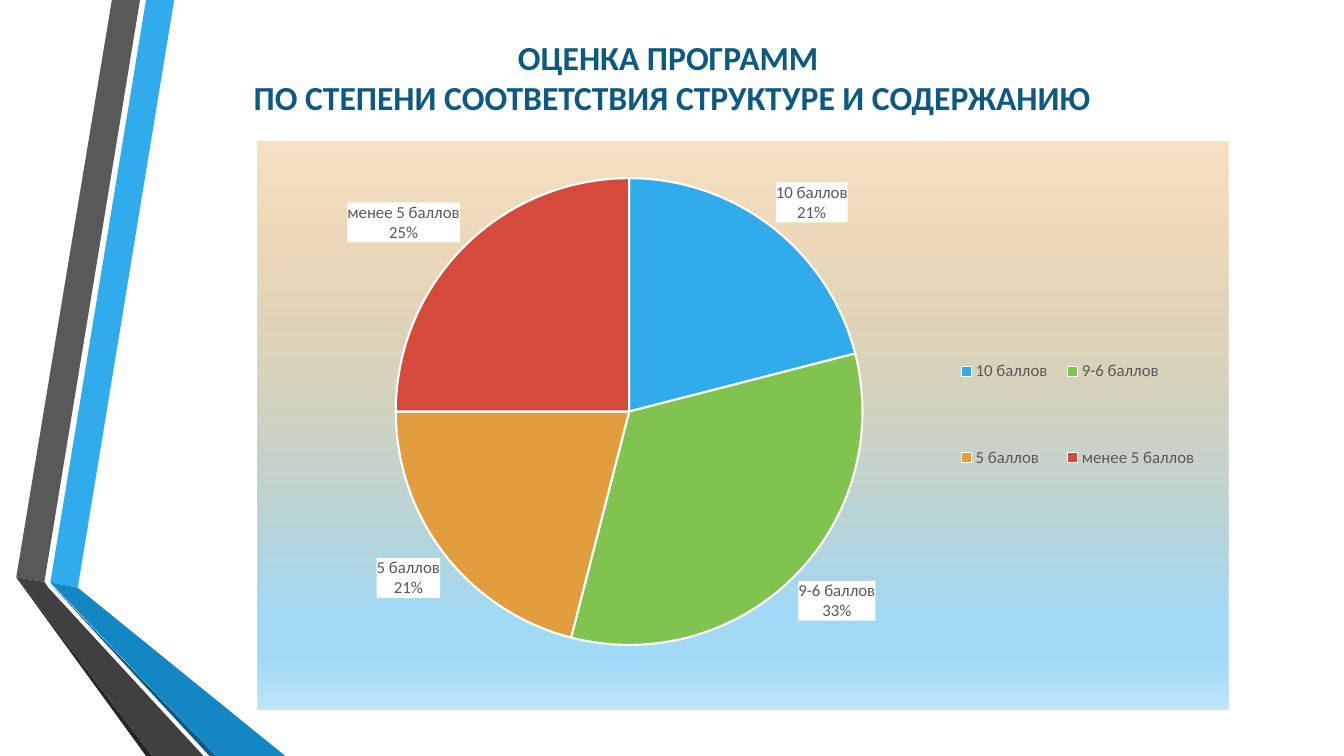
from dataclasses import dataclass

from lxml import etree
from pptx import Presentation
from pptx.chart.data import CategoryChartData
from pptx.dml.color import RGBColor
from pptx.enum.chart import XL_CHART_TYPE, XL_LABEL_POSITION as LABEL_POS, XL_LEGEND_POSITION as LEGEND_POS
from pptx.enum.text import PP_ALIGN
from pptx.oxml import parse_xml
from pptx.oxml.ns import nsdecls, qn
from pptx.util import Cm, Pt


@dataclass(frozen=True)
class Theme:
    font: str = "Calibri"
    title_size: int = 24
    chart_size: int = 12
    title: str = "0C5A82"
    text: str = "595959"
    white: str = "FFFFFF"
    slices: tuple = ("30ACEC", "80C34F", "E29D3E", "D64A3B")
    # position %, colour, opacity %
    backdrop: tuple = ((0, "E29D3E", 30), (83, "A2DAF6", 100),
                       (91, "A2DAF6", 100), (100, "C1E6F9", 100))


THEME = Theme()
SLIDE_W, SLIDE_H = 33.87, 19.05

# Colour and outline in cm, from back to front
RIBBONS = (
    ("30ACEC", ((1.27, 14.68), (1.96, 14.81), (4.39, 0), (3.68, 0))),
    ("595959", ((3.53, 0), (2.82, 0), (0.41, 14.55), (1.12, 14.66))),
    ("262626", ((0.41, 14.55), (3.68, 19.05), (3.84, 19.05))),
    ("0C5A82", ((1.27, 14.71), (5.28, 19.05), (5.44, 19.05))),
    ("1287C3", ((1.27, 14.68), (5.44, 19.05), (7.19, 19.05), (1.96, 14.81))),
    ("404040", ((5.13, 19.05), (1.22, 14.81), (1.12, 14.66), (0.41, 14.55), (3.84, 19.05))),
)
TITLE_LINES = ("ОЦЕНКА ПРОГРАММ ", "ПО СТЕПЕНИ СООТВЕТСТВИЯ СТРУКТУРЕ И СОДЕРЖАНИЮ")
SCORES = {"10 баллов": 21, "9-6 баллов": 33, "5 баллов": 21, "менее 5 баллов": 25}


def rgb(color):
    return RGBColor.from_string(color)


def style_font(font, size, color, bold=False):
    font.name, font.size, font.bold = THEME.font, Pt(size), bold
    font.color.rgb = rgb(color)


def add_ribbons(slide, left, top):
    for color, outline in RIBBONS:
        points = [(Cm(left + x), Cm(top + y)) for x, y in outline]
        builder = slide.shapes.build_freeform(*points[0])
        builder.add_line_segments(points[1:], close=True)
        sp = builder.convert_to_shape()
        sp.shadow.inherit = False
        sp.fill.solid()
        sp.fill.fore_color.rgb = rgb(color)
        sp.line.fill.background()


def add_title(slide, left, top, width, height):
    tf = slide.shapes.add_textbox(Cm(left), Cm(top), Cm(width), Cm(height)).text_frame
    tf.word_wrap = True
    tf.text = "\n".join(TITLE_LINES)
    for p in tf.paragraphs:
        p.alignment = PP_ALIGN.CENTER
        style_font(p.font, THEME.title_size, THEME.title, bold=True)


def layout_xml(x, y, w, h, inner=False):
    """Manual chart layout, in fractions of the chart area."""
    target = '<c:layoutTarget val="inner"/>' if inner else ""
    return parse_xml(
        f'<c:layout {nsdecls("c")}><c:manualLayout>{target}'
        '<c:xMode val="edge"/><c:yMode val="edge"/>'
        f'<c:x val="{x}"/><c:y val="{y}"/><c:w val="{w}"/><c:h val="{h}"/>'
        '</c:manualLayout></c:layout>')


def shape_props(fill):
    return parse_xml(f'<c:spPr {nsdecls("c", "a")}>{fill}<a:ln><a:noFill/></a:ln></c:spPr>')


def fill_backdrop(chart):
    stops = "".join(
        f'<a:gs pos="{pos * 1000}"><a:srgbClr val="{color}">'
        f'<a:alpha val="{alpha * 1000}"/></a:srgbClr></a:gs>'
        for pos, color, alpha in THEME.backdrop)
    space = chart.element
    space.find(qn("c:chart")).addnext(shape_props(
        f'<a:gradFill><a:gsLst>{stops}</a:gsLst><a:lin ang="5400000" scaled="0"/></a:gradFill>'))


def style_labels(plot):
    plot.has_data_labels = True
    labels = plot.data_labels
    style_font(labels.font, THEME.chart_size, THEME.text)
    labels.number_format, labels.number_format_is_linked = "0%", False
    labels.show_category_name = labels.show_percentage = True
    labels.show_value = False
    labels.position = LABEL_POS.OUTSIDE_END
    # The plot's labels become the labels of its only series
    element = plot.series[0].data_labels._element
    source = labels._element
    element.getparent().replace(element, source)
    source.find(qn("c:txPr")).addprevious(shape_props(
        f'<a:solidFill><a:srgbClr val="{THEME.white}"/></a:solidFill>'))
    separator = etree.Element(qn("c:separator"))
    separator.text = "\n"
    anchor = source.find(qn("c:showBubbleSize"))
    if anchor is None:
        anchor = source.find(qn("c:showPercent"))
    anchor.addnext(separator)


def style_legend(chart):
    chart.has_legend = True
    legend = chart.legend
    legend.position = LEGEND_POS.RIGHT
    legend.include_in_layout = False
    style_font(legend.font, THEME.chart_size, THEME.text)
    element = legend._element
    for old in element.findall(qn("c:layout")):
        element.remove(old)
    element.find(qn("c:legendPos")).addnext(layout_xml(0.71, 0.27, 0.27, 0.42))


def add_score_pie(slide, left, top, width, height):
    data = CategoryChartData()
    data.categories = list(SCORES)
    data.add_series("Баллы", list(SCORES.values()))
    chart = slide.shapes.add_chart(
        XL_CHART_TYPE.PIE, Cm(left), Cm(top), Cm(width), Cm(height), data).chart
    chart.has_title = False
    style_font(chart.font, THEME.chart_size, THEME.text)

    plot = chart.plots[0]
    plot.vary_by_categories = True
    for i, color in enumerate(THEME.slices):
        fmt = plot.series[0].points[i].format
        fmt.fill.solid()
        fmt.fill.fore_color.rgb = rgb(color)
        fmt.line.color.rgb = rgb(THEME.white)
        fmt.line.width = Pt(1.5)
    style_labels(plot)
    style_legend(chart)

    area = chart.element.find(".//" + qn("c:plotArea"))
    for old in area.findall(qn("c:layout")):
        area.remove(old)
    area.insert(0, layout_xml(0.115, 0.065, 0.535, 0.821, inner=True))
    fill_backdrop(chart)


def main():
    prs = Presentation()
    prs.slide_width, prs.slide_height = Cm(SLIDE_W), Cm(SLIDE_H)
    slide = prs.slides.add_slide(prs.slide_layouts[6])
    add_ribbons(slide, 0, 0)
    add_title(slide, 0, 0.81, SLIDE_W, 2.31)
    add_score_pie(slide, 6.5, 3.56, 24.46, 14.33)
    prs.save("out.pptx")


if __name__ == "__main__":
    main()
